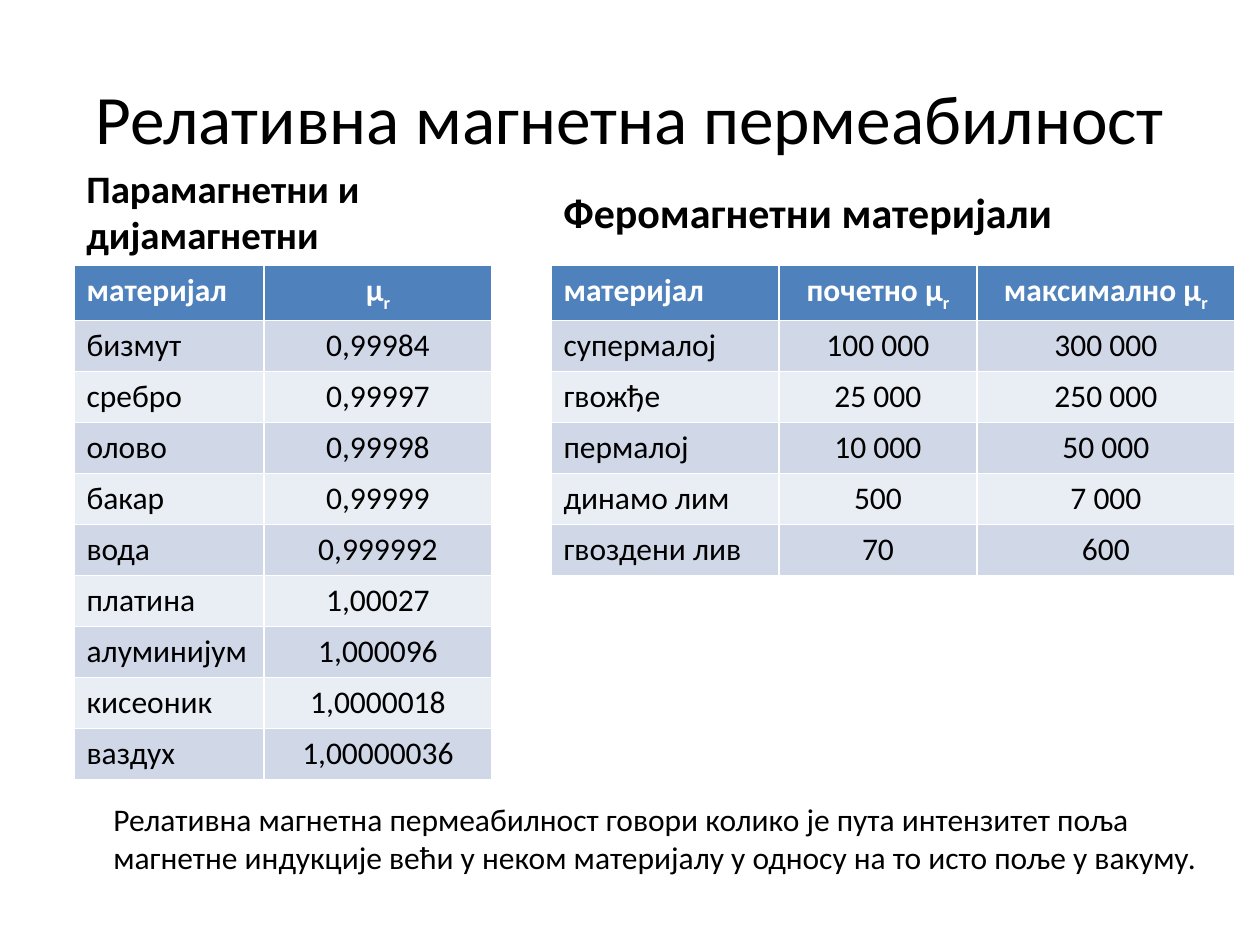
import pptx
import pptx.dml.color
import pptx.enum.text
import pptx.util

PX = 914400 / 126
FONT = "Calibri"
BLACK = pptx.dml.color.RGBColor(0x00, 0x00, 0x00)
WHITE = pptx.dml.color.RGBColor(0xFF, 0xFF, 0xFF)
HEADER = pptx.dml.color.RGBColor(0x4F, 0x81, 0xBD)
BANDS = [
    pptx.dml.color.RGBColor(0xE9, 0xED, 0xF4),
    pptx.dml.color.RGBColor(0xD0, 0xD8, 0xE8),
]
ANCHOR = pptx.enum.text.MSO_ANCHOR
ALIGN = pptx.enum.text.PP_ALIGN
ROW_HEIGHT = 51


def emu(*lengths):
    return [pptx.util.Emu(round(length * PX)) for length in lengths]


def add_span(para, text, size, color=BLACK, bold=False):
    span = para.add_run()
    span.text = text
    span.font.name = FONT
    span.font.size = pptx.util.Pt(size)
    span.font.bold = bold
    span.font.color.rgb = color
    return span


deck = pptx.Presentation()
deck.slide_width, deck.slide_height = emu(1260, 945)
page = deck.slides.add_slide(deck.slide_layouts[6])

texts = [
    ("Релативна магнетна пермеабилност",
     (63, 38, 1134, 158), 39.6, False, ANCHOR.MIDDLE, ALIGN.CENTER),
    ("Парамагнетни и дијамагнетни",
     (74, 176, 418, 88), 22.2, True, ANCHOR.BOTTOM, ALIGN.LEFT),
    ("Феромагнетни материјали",
     (551, 155, 646, 88), 24, True, ANCHOR.BOTTOM, ALIGN.LEFT),
    ("Релативна магнетна пермеабилност говори колико је пута интензитет поља "
     "магнетне индукције већи у неком материјалу у односу на то исто поље у вакуму.",
     (101, 794, 1131, 89), 18, False, ANCHOR.TOP, ALIGN.LEFT),
]
for text, place, size, bold, anchor, align in texts:
    box = page.shapes.add_textbox(*emu(*place))
    box.text_frame.word_wrap = True
    box.text_frame.vertical_anchor = anchor
    para = box.text_frame.paragraphs[0]
    para.alignment = align
    add_span(para, text, size, bold=bold)

weak_materials = [
    ("материјал", "μ"),
    ("бизмут", "0,99984"),
    ("сребро", "0,99997"),
    ("олово", "0,99998"),
    ("бакар", "0,99999"),
    ("вода", "0,999992"),
    ("платина", "1,00027"),
    ("алуминијум", "1,000096"),
    ("кисеоник", "1,0000018"),
    ("ваздух", "1,00000036"),
]
ferromagnetic_materials = [
    ("материјал", "почетно μ", "максимално μ"),
    ("супермалој", "100 000", "300 000"),
    ("гвожђе", "25 000", "250 000"),
    ("пермалој", "10 000", "50 000"),
    ("динамо лим", "500", "7 000"),
    ("гвоздени лив", "70", "600"),
]
tables = [
    (74, (190, 228), weak_materials),
    (551, (228, 198, 258), ferromagnetic_materials),
]
for left, widths, rows in tables:
    place = emu(left, 265, sum(widths), ROW_HEIGHT * len(rows))
    table = page.shapes.add_table(len(rows), len(widths), *place).table
    for column, width in zip(table.columns, emu(*widths)):
        column.width = width
    for row_index, values in enumerate(rows):
        is_header = row_index == 0
        table.rows[row_index].height = emu(ROW_HEIGHT)[0]
        for column_index, value in enumerate(values):
            cell = table.cell(row_index, column_index)
            cell.fill.solid()
            cell.fill.fore_color.rgb = HEADER if is_header else BANDS[row_index % 2]
            para = cell.text_frame.paragraphs[0]
            para.alignment = ALIGN.CENTER if column_index else ALIGN.LEFT
            color = WHITE if is_header else BLACK
            add_span(para, value, 18, color, is_header)
            if is_header and column_index:
                subscript = add_span(para, "r", 18, color, True)
                subscript.font._element.set("baseline", "-25000")

deck.save("out.pptx")
